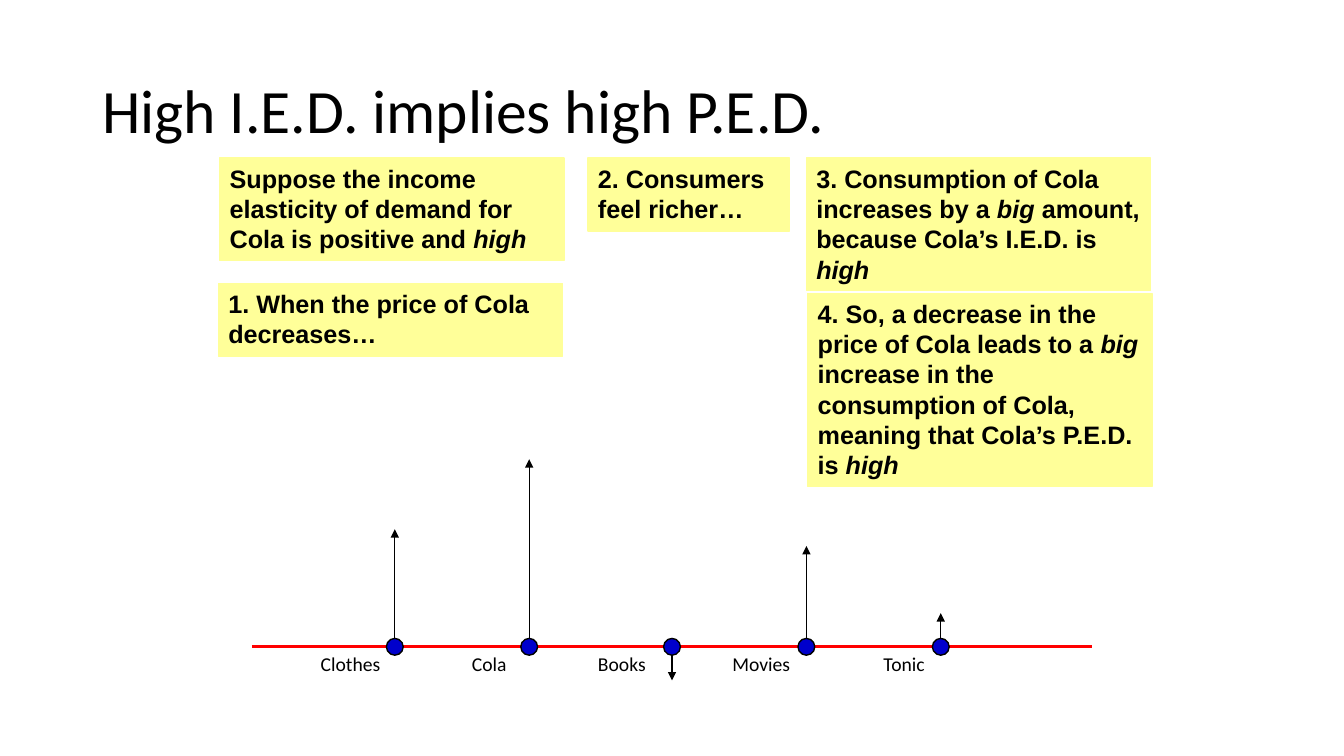
from lxml import etree
from pptx import Presentation
from pptx.dml.color import RGBColor
from pptx.enum import shapes, text
from pptx.oxml import ns
from pptx.util import Pt

BLACK, YELLOW, BLUE, RED = "000000", "FFFF99", "0000CC", "FF0000"

NOTES = [  # left, top, width, height, wording with *italic* words
    (157, 113, 246, 73, "Suppose the income elasticity of demand for Cola is positive and *high*"),
    (156, 202.5, 246, 52, "1. When the price of Cola decreases…"),
    (420, 113, 144, 52, "2. Consumers feel richer…"),
    (576, 113, 246, 94.5, "3. Consumption of Cola increases by a *big* amount, "
                          "because Cola’s I.E.D. is *high*"),
    (577, 209.5, 246, 138, "4. So, a decrease in the price of Cola leads to a *big* increase "
                           "in the consumption of Cola, meaning that Cola’s P.E.D. is *high*"),
]

GOODS = [  # name, dot centre, label offset to the left, label width, rise of arrow
    ("Clothes", 282, 60, 66, 84),
    ("Cola", 378, 48, 54, 134),
    ("Books", 480, 60, 54, -24),
    ("Movies", 576, 60, 66, 72),
    ("Tonic", 672, 48, 54, 24),
]


def color(value):
    return RGBColor.from_string(value)


def write(shape, wording, font, size, bold=False):
    """Fill a shape with one paragraph; words between asterisks are italic."""
    frame = shape.text_frame
    frame.word_wrap = True
    para = frame.paragraphs[0]
    para.alignment = text.PP_ALIGN.LEFT
    para.font.name, para.font.size, para.font.bold = font, Pt(size), bold
    para.font.color.rgb = color(BLACK)
    for index, part in enumerate(wording.split("*")):
        if part:
            span = para.add_run()
            span.text = part
            if index % 2:
                span.font.italic = True
    return para


def add_text(page, box, wording, size):
    label = page.shapes.add_textbox(*map(Pt, box))
    return label, write(label, wording, "Calibri", size)


def add_filled(page, kind, box, fill, line):
    shape = page.shapes.add_shape(kind, *map(Pt, box))
    shape.shadow.inherit = False
    shape.fill.solid()
    shape.fill.fore_color.rgb = color(fill)
    shape.line.color.rgb = color(line)
    shape.line.width = Pt(1)
    return shape


def add_line(page, start, end, stroke, width, arrow=False):
    line = page.shapes.add_connector(
        shapes.MSO_CONNECTOR.STRAIGHT, *map(Pt, (*start, *end)))
    line.line.color.rgb = color(stroke)
    line.line.width = Pt(width)
    if arrow:
        etree.SubElement(line.line._get_or_add_ln(), ns.qn("a:tailEnd"), type="triangle")
    etree.SubElement(line._element.spPr, ns.qn("a:effectLst"))


def add_title(page, box, wording):
    title, para = add_text(page, box, wording, 44)
    title.text_frame.vertical_anchor = text.MSO_ANCHOR.MIDDLE
    para.line_spacing = 0.9


def add_note(page, box, wording):
    note = add_filled(page, shapes.MSO_SHAPE.RECTANGLE, box, YELLOW, YELLOW)
    note.text_frame.vertical_anchor = text.MSO_ANCHOR.TOP
    write(note, wording, "Arial", 18, bold=True)


def add_goods_axis(page, left, axis, width, dot=12):
    """Draw the goods along a line, each with an arrow for its change."""
    for name, center, offset, label_width, rise in GOODS:
        add_line(page, (center, axis), (center, axis - rise), BLACK, 1, arrow=True)
    add_line(page, (left, axis), (left + width, axis), RED, 2.25)
    for name, center, offset, label_width, rise in GOODS:
        add_text(page, (center - offset, axis, label_width, 24), name, 14)
        add_filled(page, shapes.MSO_SHAPE.OVAL,
                   (center - dot / 2, axis - dot / 2, dot, dot), BLUE, BLACK)


def main():
    deck = Presentation()
    deck.slide_width, deck.slide_height = Pt(960), Pt(540)
    page = deck.slides.add_slide(deck.slide_layouts[6])
    add_title(page, (66, 29, 828, 104), "High I.E.D. implies high P.E.D.")
    for *box, wording in NOTES:
        add_note(page, box, wording)
    add_goods_axis(page, left=180, axis=462, width=600)
    deck.save("out.pptx")


if __name__ == "__main__":
    main()
